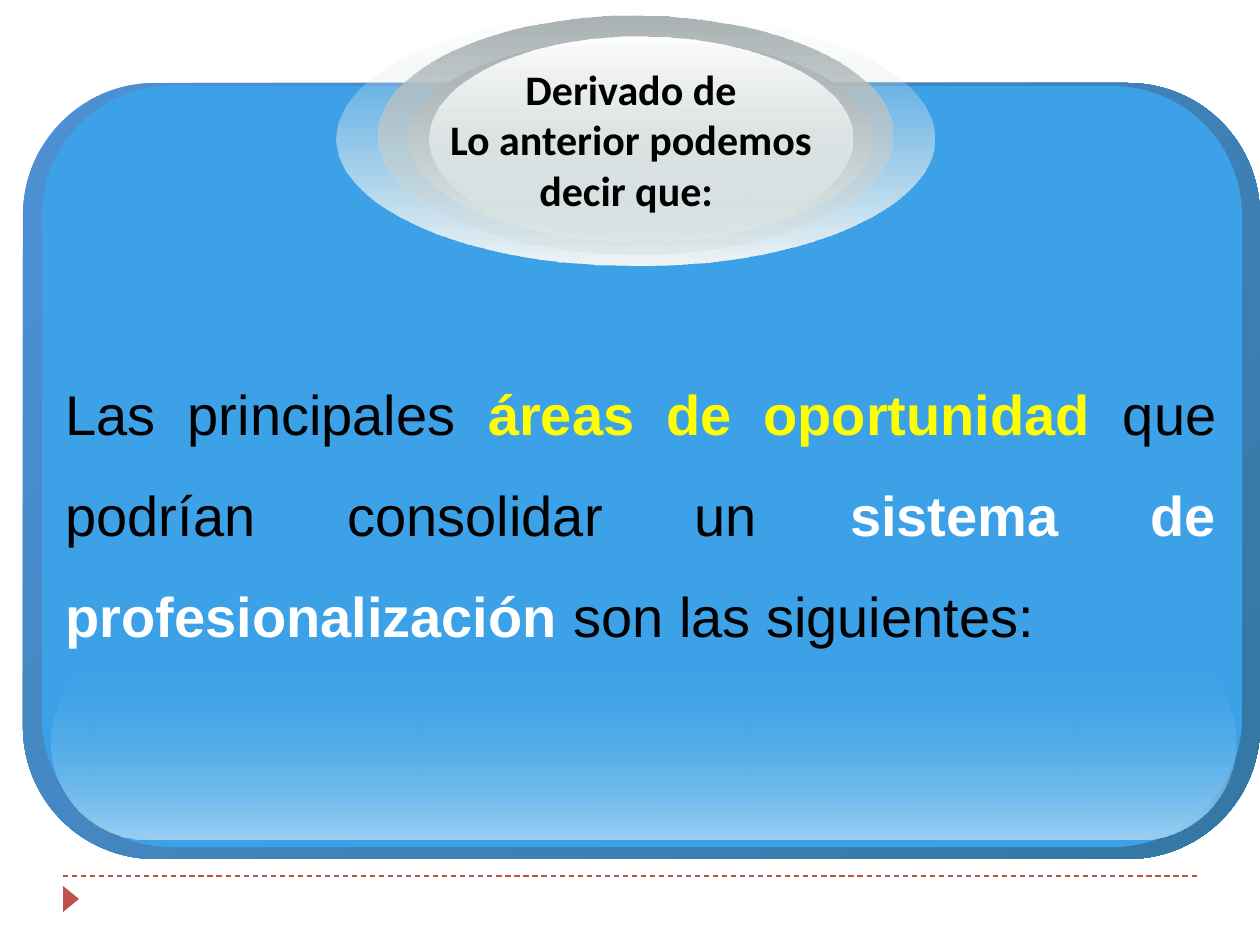
from lxml import etree
from pptx import Presentation
from pptx.dml.color import RGBColor
from pptx.enum.dml import MSO_LINE
from pptx.enum.shapes import MSO_CONNECTOR, MSO_SHAPE
from pptx.enum.text import MSO_ANCHOR, MSO_AUTO_SIZE, PP_ALIGN
from pptx.oxml.ns import qn
from pptx.util import Emu, Pt

PX = 914400 / 126
ROUNDED, OVAL = MSO_SHAPE.ROUNDED_RECTANGLE, MSO_SHAPE.OVAL
TRIANGLE = MSO_SHAPE.ISOSCELES_TRIANGLE
STRAIGHT, DASH = MSO_CONNECTOR.STRAIGHT, MSO_LINE.DASH
CENTER, JUSTIFY = PP_ALIGN.CENTER, PP_ALIGN.JUSTIFY
TOP, NO_FIT = MSO_ANCHOR.TOP, MSO_AUTO_SIZE.NONE

BLACK, WHITE, YELLOW = "000000", "FFFFFF", "FFFF00"
RED, BLUE, SILVER = "C0504D", "3CA1E6", "D6E1E2"


def px(value):
    return Emu(round(value * PX))


def rgb(color):
    return RGBColor.from_string(color)


class SlideBuilder:
    heading_font, body_font = "Calibri", "Arial"

    def __init__(self, slide):
        self.slide = slide

    def shape(self, kind, box, fill, angle=90, radius=None, rotation=0):
        """Fill is a hex colour, or two (colour, opacity %) gradient stops."""
        shape = self.slide.shapes.add_shape(kind, *map(px, box))
        shape.shadow.inherit = False
        shape.line.fill.background()
        shape.rotation = rotation
        if radius is not None:
            shape.adjustments[0] = radius
        if isinstance(fill, str):
            shape.fill.solid()
            shape.fill.fore_color.rgb = rgb(fill)
        else:
            self.gradient(shape, fill, angle)

    def gradient(self, shape, stops, angle):
        shape.fill.gradient()
        shape.fill.gradient_angle = 360 - angle
        for stop, (color, _) in zip(shape.fill.gradient_stops, stops):
            stop.color.rgb = rgb(color)
        colors = shape._element.spPr.iter(qn("a:srgbClr"))
        for node, (_, opacity) in zip(colors, stops):
            if opacity < 100:
                etree.SubElement(node, qn("a:alpha"), val=str(opacity * 1000))

    def dashed_line(self, start, end, color):
        line = self.slide.shapes.add_connector(STRAIGHT, *map(px, start + end))
        line.line.color.rgb = rgb(color)
        line.line.width = Pt(0.75)
        line.line.dash_style = DASH
        etree.SubElement(line._element.spPr, qn("a:effectLst"))

    def placeholder(self, holder, box, paragraphs, font, size, align, spacing):
        """Each paragraph is a list of (text, colour, bold) runs."""
        holder.left, holder.top, holder.width, holder.height = map(px, box)
        # Bring the text in front of the panel and ovals
        self.slide.shapes._spTree.append(holder._element)
        frame = holder.text_frame
        frame.word_wrap = True
        frame.auto_size = NO_FIT
        frame.vertical_anchor = TOP
        for index, runs in enumerate(paragraphs):
            paragraph = frame.add_paragraph() if index else frame.paragraphs[0]
            paragraph.alignment = align
            paragraph.line_spacing = spacing
            paragraph.space_before = Pt(0)
            properties = paragraph._p.get_or_add_pPr()
            properties.set("marL", "0")
            properties.set("indent", "0")
            etree.SubElement(properties, qn("a:buNone"))
            for text, color, bold in runs:
                run = paragraph.add_run()
                run.text = text
                run.font.name = font
                run.font.size = Pt(size)
                run.font.bold = bold
                run.font.color.rgb = rgb(color)


def main():
    prs = Presentation()
    prs.slide_width, prs.slide_height = px(1260), px(945)
    slide = prs.slides.add_slide(prs.slide_layouts[1])
    heading, statement = slide.placeholders
    builder = SlideBuilder(slide)

    # Footer rule and marker
    builder.dashed_line((63, 876), (1197, 876), RED)
    builder.shape(TRIANGLE, (58, 891, 26, 16), RED, rotation=90)

    # Blue panel: rim, face and lower gloss
    builder.shape(ROUNDED, (23, 83, 1237, 776),
                  [("4E91D4", 100), ("3477A4", 100)], angle=45, radius=0.17)
    builder.shape(ROUNDED, (42, 86, 1200, 761), BLUE, radius=0.17)
    builder.shape(ROUNDED, (52, 646, 1184, 193),
                  [(BLUE, 0), ("9BCFF2", 100)], radius=0.5)

    # Glass badge, from back to front
    badge_layers = [
        ((454, 54, 367, 174), "333333"),
        ((409, 38, 464, 203), [("636869", 100), (SILVER, 100)]),
        ((337, 12, 597, 254), [(SILVER, 0), ("F1F5F5", 100)]),
        ((379, 16, 513, 239), [("AAB2B3", 100), (SILVER, 48)]),
        ((430, 37, 422, 204), [(WHITE, 100), (SILVER, 38)]),
    ]
    for box, fill in badge_layers:
        builder.shape(OVAL, box, fill)

    # Heading on the badge
    builder.placeholder(
        heading, (391, 57, 480, 165),
        [[("Derivado de", BLACK, True)],
         [("Lo anterior podemos decir que: ", BLACK, True)]],
        builder.heading_font, 24, CENTER, 1.0)

    # Statement on the panel
    builder.placeholder(
        statement, (53, 340, 1176, 369),
        [[("Las principales ", BLACK, False),
          ("áreas de oportunidad ", YELLOW, True),
          ("que podrían consolidar un ", BLACK, False),
          ("sistema de profesionalización", WHITE, True),
          (" son las siguientes: ", BLACK, False)]],
        builder.body_font, 32, JUSTIFY, 1.5)

    prs.save("out.pptx")


if __name__ == "__main__":
    main()
